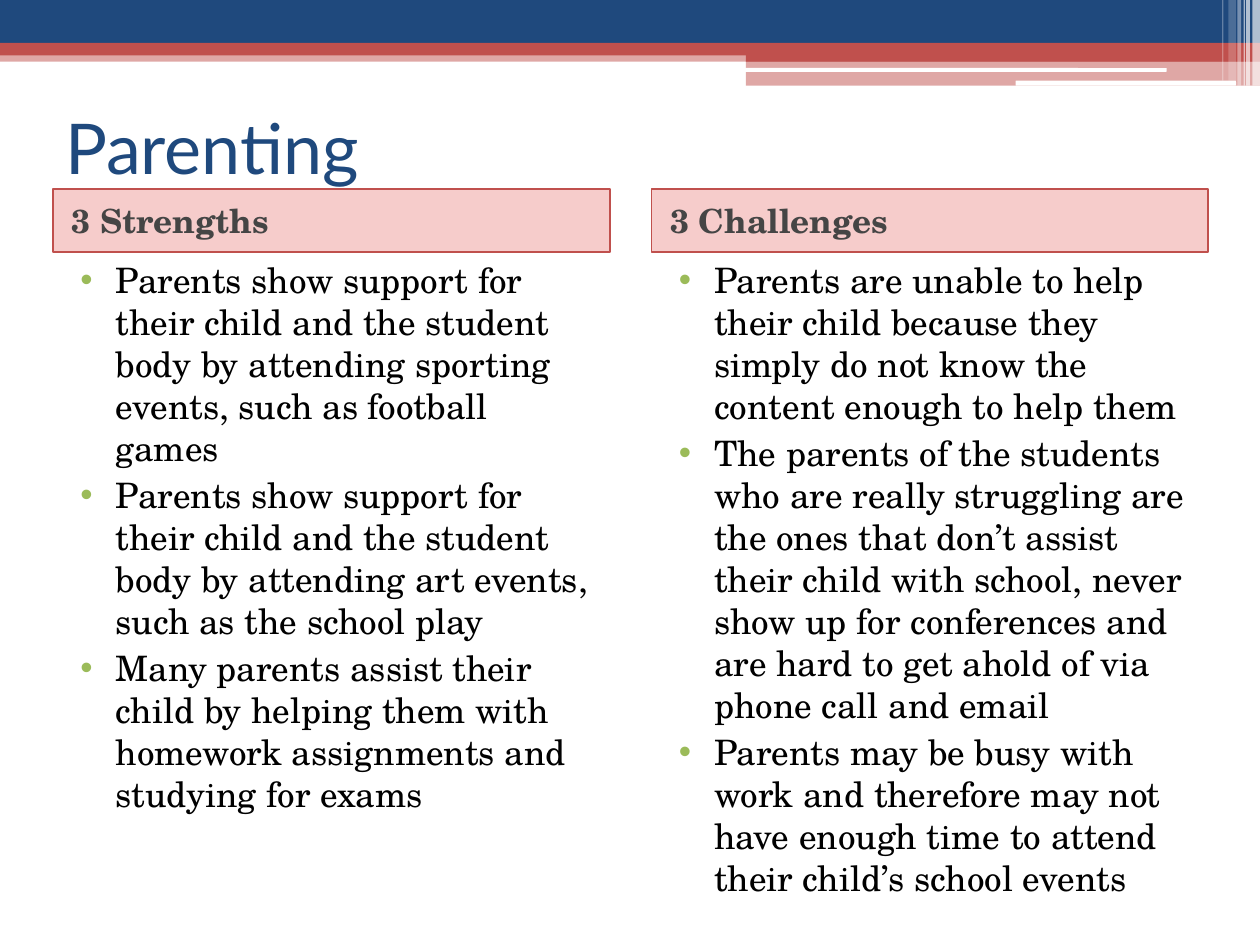
from typing import NamedTuple

import pptx
import pptx.dml.color
import pptx.enum.shapes
import pptx.enum.text
import pptx.oxml.ns
import pptx.util
from lxml import etree

Inches, Pt = pptx.util.Inches, pptx.util.Pt
RGBColor = pptx.dml.color.RGBColor
SHAPE = pptx.enum.shapes.MSO_SHAPE
ANCHOR = pptx.enum.text.MSO_ANCHOR
qn = pptx.oxml.ns.qn

NAVY = RGBColor(0x1F, 0x49, 0x7D)
RED = RGBColor(0xC0, 0x50, 0x4D)
ROSE = RGBColor(0xDD, 0x35, 0x30)
GREEN = RGBColor(0x9B, 0xBB, 0x59)
GRAY = RGBColor(0x45, 0x45, 0x45)
WHITE = RGBColor(0xFF, 0xFF, 0xFF)
BLACK = RGBColor(0, 0, 0)
HEAD_FONT, BODY_FONT = "Lato", "TeX Gyre Schola"
LEFT, COL_W, COL_STEP = 0.42, 4.42, 4.75


class Bar(NamedTuple):
    x: float
    y: float
    w: float
    h: float
    color: RGBColor
    alpha: int = 100
    rounded: bool = False


class Column(NamedTuple):
    heading: str
    height: float
    points: list[str]


BARS = [
    Bar(0, 0.4, 10, 0.09, RED, 50),
    Bar(0, 0, 10, 0.34, NAVY),
    Bar(0, 0.34, 10, 0.1, RED),
    Bar(5.92, 0.39, 4.08, 0.1, RED),
    Bar(5.92, 0.48, 4.08, 0.2, RED, 50),
    Bar(5.91, 0.54, 3.35, 0.03, WHITE, rounded=True),
    Bar(8.06, 0.64, 1.75, 0.04, WHITE, rounded=True),
    Bar(9.94, 0, 0.06, 0.68, WHITE, 65),
    Bar(9.89, 0, 0.03, 0.68, WHITE, 65),
    Bar(9.87, 0, 0.01, 0.68, WHITE, 60),
    Bar(9.82, 0, 0.03, 0.68, WHITE, 40),
    Bar(9.75, 0, 0.06, 0.64, WHITE, 20),
    Bar(9.7, 0, 0.01, 0.64, WHITE, 30),
]

COLUMNS = [
    Column("3 Strengths", 4.5, [
        "Parents show support for their child and the student body by "
        "attending sporting events, such as football games",
        "Parents show support for their child and the student body by "
        "attending art events, such as the school play",
        "Many parents assist their child by helping them with homework "
        "assignments and studying for exams",
    ]),
    Column("3 Challenges", 5, [
        "Parents are unable to help their child because they simply do not "
        "know the content enough to help them",
        "The parents of the students who are really struggling are the ones "
        "that don’t assist their child with school, never show up for "
        "conferences and are hard to get ahold of via phone call and email",
        "Parents may be busy with work and therefore may not have enough "
        "time to attend their child’s school events",
    ]),
]


def add_bar(s, bar: Bar):
    kind = SHAPE.ROUNDED_RECTANGLE if bar.rounded else SHAPE.RECTANGLE
    sp = s.shapes.add_shape(kind, Inches(bar.x), Inches(bar.y),
                            Inches(bar.w), Inches(bar.h))
    sp.shadow.inherit = False
    sp.line.fill.background()
    sp.fill.solid()
    sp.fill.fore_color.rgb = bar.color
    if bar.alpha < 100:
        clr = sp.fill._xPr.find(".//" + qn("a:srgbClr"))
        etree.SubElement(clr, qn("a:alpha"), val=str(bar.alpha * 1000))
    return sp


def add_run(p, text: str, size: float, font: str, color: RGBColor,
            bold: bool = False) -> None:
    r = p.add_run()
    r.text = text
    r.font.size, r.font.name, r.font.bold = Pt(size), font, bold
    r.font.color.rgb = color


def set_indent(p, left: float, first: float) -> None:
    p.alignment = pptx.enum.text.PP_ALIGN.LEFT
    p.space_before = Pt(3)
    pPr = p._p.get_or_add_pPr()
    pPr.set("marL", str(Inches(left)))
    pPr.set("indent", str(Inches(first)))


def add_bullet(p) -> None:
    pPr = p._p.get_or_add_pPr()
    clr = etree.SubElement(pPr, qn("a:buClr"))
    etree.SubElement(clr, qn("a:srgbClr"), val=str(GREEN))
    etree.SubElement(pPr, qn("a:buFont"), typeface="Arial")
    etree.SubElement(pPr, qn("a:buChar"), char="•")


def add_text_box(s, x: float, y: float, w: float, h: float):
    tf = s.shapes.add_textbox(Inches(x), Inches(y), Inches(w), Inches(h)).text_frame
    tf.word_wrap = True
    return tf


def add_column(s, x: float, col: Column) -> None:
    # Heading box
    sp = add_bar(s, Bar(x, 1.5, COL_W, 0.5, ROSE, 25))
    sp.line.color.rgb = RED
    sp.line.width = Pt(1)
    tf = sp.text_frame
    tf.word_wrap = True
    tf.vertical_anchor = ANCHOR.MIDDLE
    p = tf.paragraphs[0]
    set_indent(p, 0.05, 0)
    add_run(p, col.heading, 19, BODY_FONT, GRAY, bold=True)

    # Bulleted points
    tf = add_text_box(s, x, 2, COL_W, col.height)
    for i, point in enumerate(col.points):
        p = tf.add_paragraph() if i else tf.paragraphs[0]
        set_indent(p, 0.4, -0.28)
        add_bullet(p)
        add_run(p, point, 20, BODY_FONT, BLACK)


def main() -> None:
    prs = pptx.Presentation()
    prs.slide_width, prs.slide_height = Inches(10), Inches(7.5)
    s = prs.slides.add_slide(prs.slide_layouts[6])

    # Banner
    for bar in BARS:
        add_bar(s, bar)

    # Title
    tf = add_text_box(s, LEFT, 0.58, 9.17, 1.17)
    tf.vertical_anchor = ANCHOR.MIDDLE
    add_run(tf.paragraphs[0], "Parenting", 40, HEAD_FONT, NAVY)

    # Columns
    for i, col in enumerate(COLUMNS):
        add_column(s, LEFT + i * COL_STEP, col)

    prs.save("out.pptx")


if __name__ == "__main__":
    main()
